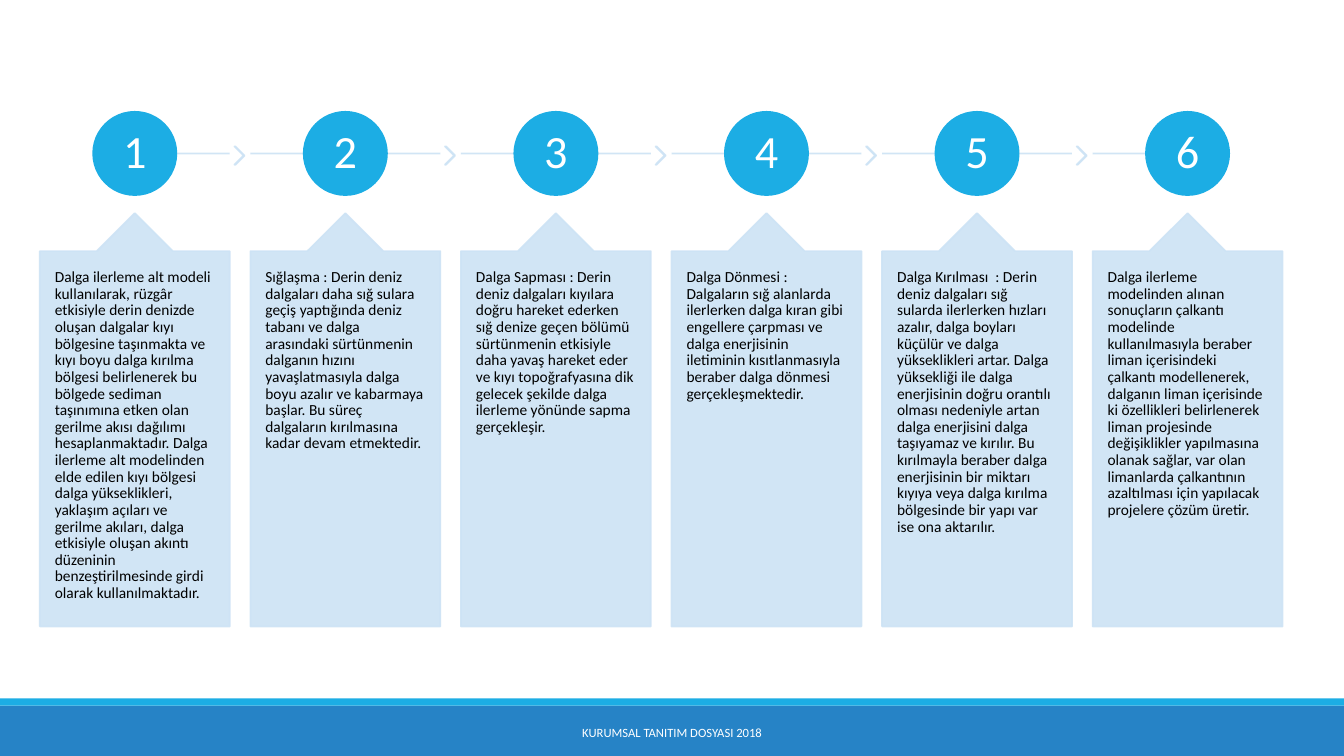
"""Build a slide with six numbered steps on wave modelling."""
import pptx
import pptx.util
import pptx.dml.color
import pptx.enum.shapes
import pptx.enum.text
import pptx.oxml
import pptx.oxml.ns
import lxml.etree

Pt = pptx.util.Pt
RGBColor = pptx.dml.color.RGBColor
Kind = pptx.enum.shapes.MSO_SHAPE
Align = pptx.enum.text.PP_ALIGN
Anchor = pptx.enum.text.MSO_ANCHOR
qn = pptx.oxml.ns.qn

SKY = RGBColor(0x1C, 0xAD, 0xE4)
BLUE = RGBColor(0x26, 0x83, 0xC6)
PALE = RGBColor(0xCD, 0xE3, 0xF5)
WHITE = RGBColor(0xFF, 0xFF, 0xFF)
BLACK = RGBColor(0x00, 0x00, 0x00)

WIDE, HIGH = 960, 540
LEFT, STEP, CARD = 28.5, 150.4, 135.6
DISC, MID = 59.4, 109.6

STEPS = [
    "Dalga ilerleme alt modeli kullanılarak, rüzgâr etkisiyle derin denizde "
    "oluşan dalgalar kıyı bölgesine taşınmakta ve kıyı boyu dalga kırılma "
    "bölgesi belirlenerek bu bölgede sediman taşınımına etken olan gerilme "
    "akısı dağılımı hesaplanmaktadır. Dalga ilerleme alt modelinden elde "
    "edilen kıyı bölgesi dalga yükseklikleri, yaklaşım açıları ve gerilme "
    "akıları, dalga etkisiyle oluşan akıntı düzeninin benzeştirilmesinde "
    "girdi olarak kullanılmaktadır.",
    "Sığlaşma : Derin deniz dalgaları daha sığ sulara geçiş yaptığında deniz "
    "tabanı ve dalga arasındaki sürtünmenin dalganın hızını yavaşlatmasıyla "
    "dalga boyu azalır ve kabarmaya başlar. Bu süreç dalgaların kırılmasına "
    "kadar devam etmektedir.",
    "Dalga Sapması : Derin deniz dalgaları kıyılara doğru hareket ederken sığ "
    "denize geçen bölümü sürtünmenin etkisiyle daha yavaş hareket eder ve "
    "kıyı topoğrafyasına dik gelecek şekilde dalga ilerleme yönünde sapma "
    "gerçekleşir.",
    "Dalga Dönmesi : Dalgaların sığ alanlarda ilerlerken dalga kıran gibi "
    "engellere çarpması ve dalga enerjisinin iletiminin kısıtlanmasıyla "
    "beraber dalga dönmesi gerçekleşmektedir.",
    "Dalga Kırılması  : Derin deniz dalgaları sığ sularda ilerlerken hızları "
    "azalır, dalga boyları küçülür ve dalga yükseklikleri artar. Dalga "
    "yüksekliği ile dalga enerjisinin doğru orantılı olması nedeniyle artan "
    "dalga enerjisini dalga taşıyamaz ve kırılır. Bu kırılmayla beraber dalga "
    "enerjisinin bir miktarı kıyıya veya dalga kırılma bölgesinde bir yapı "
    "var ise ona aktarılır.",
    "Dalga ilerleme modelinden alınan sonuçların çalkantı modelinde "
    "kullanılmasıyla beraber liman içerisindeki çalkantı modellenerek, "
    "dalganın liman içerisinde ki özellikleri belirlenerek liman projesinde "
    "değişiklikler yapılmasına olanak sağlar, var olan limanlarda çalkantının "
    "azaltılması için yapılacak projelere çözüm üretir.",
]


def write(shape, text, size=11, color=BLACK, font="Calibri", align=Align.LEFT,
          anchor=Anchor.TOP, pad=(7.2, 3.6), space=None):
    frame = shape.text_frame
    frame.word_wrap = True
    frame.vertical_anchor = anchor
    frame.margin_left = frame.margin_right = Pt(pad[0])
    frame.margin_top = frame.margin_bottom = Pt(pad[1])
    para = frame.paragraphs[0]
    para.alignment = align
    para.line_spacing = space
    run = para.add_run()
    run.text = text
    run.font.name = font
    run.font.size = Pt(size)
    run.font.color.rgb = color


class Deck:
    def __init__(self, slide, edge=1.25, alpha=90):
        self.shapes = slide.shapes
        self.edge = edge
        self.alpha = alpha

    def fade(self, item):
        for tone in item.element.spPr.iter(qn("a:srgbClr")):
            mark = lxml.etree.SubElement(tone, qn("a:alpha"))
            mark.set("val", str(self.alpha * 1000))

    def shape(self, kind, x, y, w, h, fill, line=None, fade=False, adj=()):
        item = self.shapes.add_shape(kind, Pt(x), Pt(y), Pt(w), Pt(h))
        item.shadow.inherit = False
        for i, value in enumerate(adj):
            item.adjustments[i] = value
        item.fill.solid()
        item.fill.fore_color.rgb = fill
        if line is None:
            item.line.fill.background()
        else:
            item.line.color.rgb = line
            item.line.width = Pt(self.edge)
        if fade:
            self.fade(item)
        return item

    def line(self, start, end, y, color):
        item = self.shapes.add_connector(
            pptx.enum.shapes.MSO_CONNECTOR.STRAIGHT,
            Pt(start), Pt(y), Pt(end), Pt(y))
        item.line.color.rgb = color
        item.line.width = Pt(self.edge)
        lxml.etree.SubElement(item.element.spPr, qn("a:effectLst"))
        self.fade(item)

    def label(self, x, y, w, h, text, **style):
        write(self.shapes.add_textbox(Pt(x), Pt(y), Pt(w), Pt(h)), text, **style)

    def step(self, index, text):
        x = LEFT + index * STEP
        first, last = index == 0, index == len(STEPS) - 1
        self.line(x + 75 if first else x, x + CARD / 2 if last else x + CARD,
                  MID, PALE)
        if not last:
            self.shape(Kind.CHEVRON, x + 139, 104.6, 7.2, 13, PALE, PALE,
                       fade=True, adj=[0.9])
        disc = self.shape(Kind.OVAL, x + (CARD - DISC) / 2, MID - DISC / 2,
                          DISC, DISC, SKY, SKY)
        write(disc, str(index + 1), size=33, color=WHITE, align=Align.CENTER,
              anchor=Anchor.MIDDLE, pad=(2.3, 2.3), space=0.9)
        card = self.shape(Kind.UP_ARROW_CALLOUT, x, 152.3, CARD, 295.2, PALE,
                          PALE, fade=True, adj=[0.5, 0.2, 0.2, 1])
        write(card, text, pad=(10.7, 13), space=0.9)


def main():
    show = pptx.Presentation()
    show.slide_width, show.slide_height = Pt(WIDE), Pt(HIGH)
    deck = Deck(show.slides.add_slide(show.slide_layouts[6]))
    deck.shape(Kind.RECTANGLE, 0, 504, WIDE, 36, BLUE)
    deck.shape(Kind.RECTANGLE, 0, 498.8, WIDE, 5.2, SKY)
    deck.label(290.2, 508.5, 379.6, 28.8, "KURUMSAL TANITIM DOSYASI 2018",
               size=9, color=WHITE, align=Align.CENTER, anchor=Anchor.MIDDLE)
    for index, text in enumerate(STEPS):
        deck.step(index, text)
    show.save("out.pptx")


if __name__ == "__main__":
    main()
